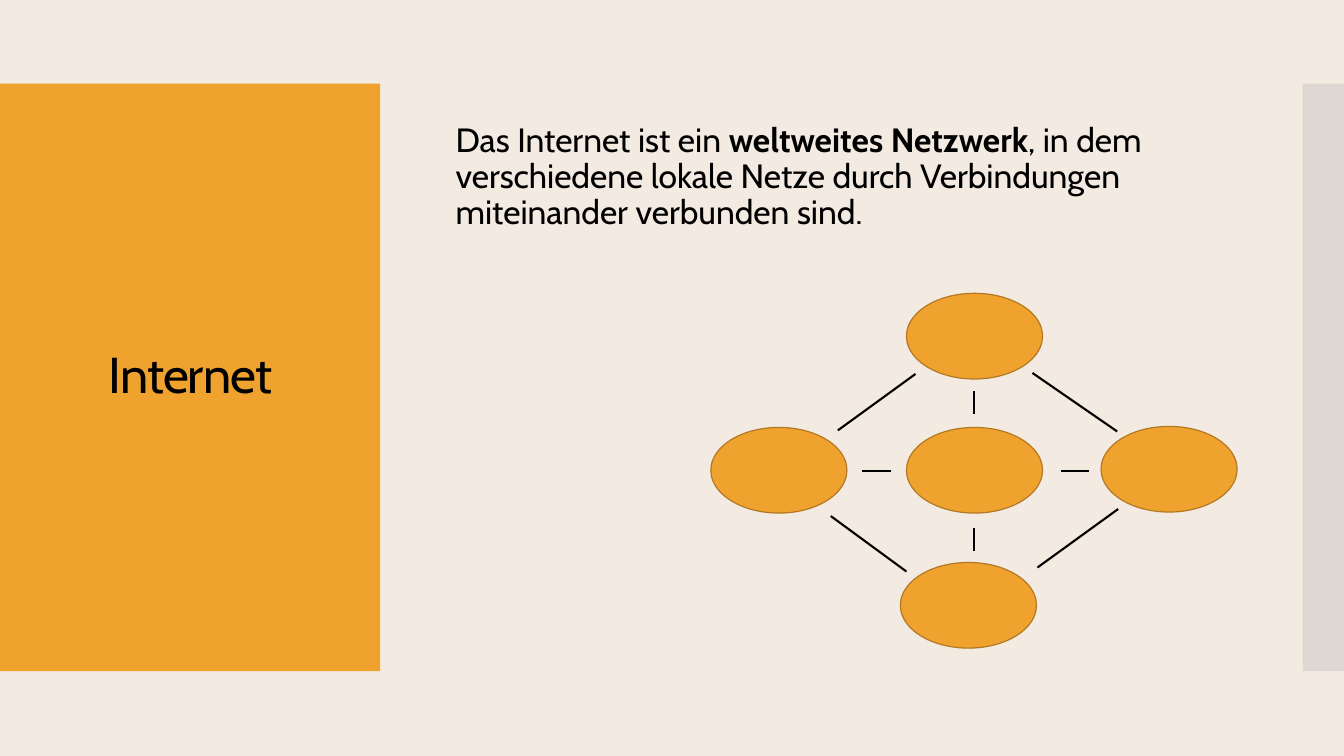
from dataclasses import dataclass

from lxml.etree import SubElement
from pptx import Presentation
from pptx.dml.color import RGBColor
from pptx.enum.shapes import MSO_CONNECTOR, MSO_SHAPE
from pptx.enum.text import MSO_ANCHOR, PP_ALIGN
from pptx.oxml.ns import qn
from pptx.util import Inches, Pt


@dataclass(frozen=True)
class Theme:
    back: str = "F3EAE2"
    gold: str = "F0A22E"
    edge: str = "B27822"
    gray: str = "C8C8C8"
    ink: str = "000000"
    font: str = "Cabin"
    title: int = 36
    body: int = 24
    rim: float = 0.85
    link: float = 1.5


THEME = Theme()
NODE = (1.35, 0.85)
NODES = [(1.88, 2.67), (3.87, 1.32), (1.94, 1.33), (1.94, 0), (0, 1.33)]
LINKS = [
    (2.03, 0.8, 1.26, 1.36),
    (4.04, 2.14, 3.24, 2.72),
    (1.94, 2.76, 1.19, 2.21),
    (4.03, 1.37, 3.19, 0.79),
    (2.61, 0.97, 2.61, 1.2),
    (2.61, 2.33, 2.61, 2.56),
    (3.75, 1.76, 3.47, 1.76),
    (1.79, 1.76, 1.5, 1.76),
]


def color(code):
    return RGBColor.from_string(code)


def add_fill(parent, kind, box, fill):
    shape = parent.shapes.add_shape(kind, *map(Inches, box))
    shape.shadow.inherit = False
    shape.fill.solid()
    shape.fill.fore_color.rgb = color(fill)
    shape.line.fill.background()
    return shape


def add_text(slide, box, text, size, anchor):
    frame = slide.shapes.add_textbox(*map(Inches, box)).text_frame
    frame.word_wrap = True
    frame.vertical_anchor = anchor
    frame.text = text
    para = frame.paragraphs[0]
    para.line_spacing = 0.9
    style_run(para.runs[0], size)
    return frame


def style_run(run, size):
    run.font.name = THEME.font
    run.font.size = Pt(size)
    run.font.color.rgb = color(THEME.ink)


def add_panel(slide, box):
    left, top, width, height = box
    add_fill(slide, MSO_SHAPE.RECTANGLE, box, THEME.gold)
    area = (left + 0.28, top + 0.4, width - 0.55, height - 0.8)
    frame = add_text(slide, area, "Internet", THEME.title, MSO_ANCHOR.MIDDLE)
    para = frame.paragraphs[0]
    para.alignment = PP_ALIGN.CENTER
    para.runs[0].font._element.set("spc", "-60")


def add_strip(slide, box):
    strip = add_fill(slide, MSO_SHAPE.RECTANGLE, box, THEME.gray)
    tint = strip.fill._xPr.find(qn("a:solidFill"))[0]
    SubElement(tint, qn("a:alpha")).set("val", "50000")


def add_body(slide, box):
    frame = add_text(slide, box, "Das Internet ist ein ", THEME.body, MSO_ANCHOR.TOP)
    frame.margin_top = 0
    para = frame.paragraphs[0]
    rest = ", in dem verschiedene lokale Netze durch Verbindungen miteinander verbunden sind."
    for text, bold in [("weltweites Netzwerk", True), (rest, False)]:
        run = para.add_run()
        run.text = text
        style_run(run, THEME.body)
        run.font.bold = bold


def add_net(slide, box):
    left, top = box[:2]
    group = slide.shapes.add_group_shape()
    for x, y in NODES:
        node = add_fill(group, MSO_SHAPE.OVAL, (left + x, top + y, *NODE), THEME.gold)
        node.line.color.rgb = color(THEME.edge)
        node.line.width = Pt(THEME.rim)
    for x1, y1, x2, y2 in LINKS:
        ends = (left + x1, top + y1, left + x2, top + y2)
        link = group.shapes.add_connector(MSO_CONNECTOR.STRAIGHT, *map(Inches, ends))
        link.line.color.rgb = color(THEME.ink)
        link.line.width = Pt(THEME.link)
        SubElement(link._element.spPr, qn("a:effectLst"))


def main():
    deck = Presentation()
    deck.slide_width, deck.slide_height = Inches(13.33), Inches(7.5)
    slide = deck.slides.add_slide(deck.slide_layouts[6])
    slide.background.fill.solid()
    slide.background.fill.fore_color.rgb = color(THEME.back)
    add_panel(slide, (0, 0.83, 3.77, 5.83))
    add_strip(slide, (12.92, 0.83, 0.41, 5.83))
    add_body(slide, (4.42, 1.22, 7.21, 1.89))
    add_net(slide, (7.05, 2.91, 5.22, 3.52))
    deck.save("out.pptx")


if __name__ == "__main__":
    main()
